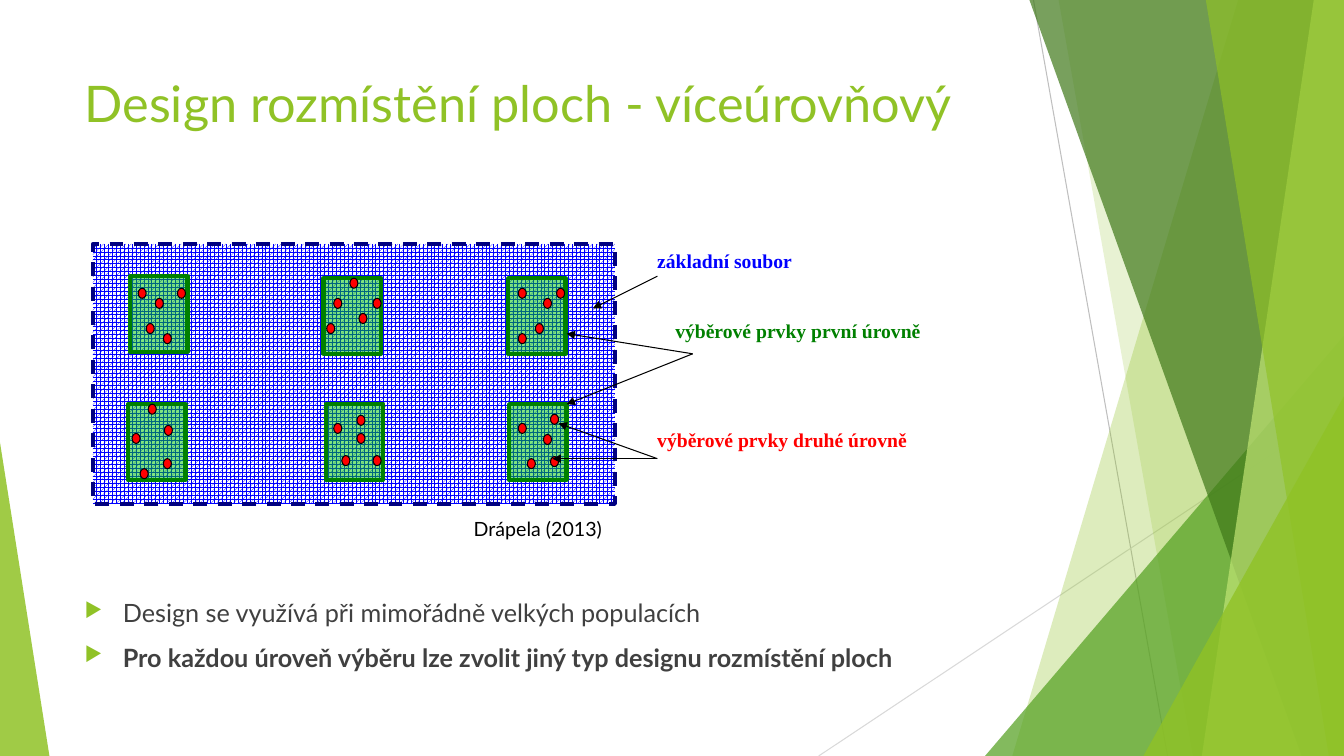
from lxml.etree import SubElement
from pptx import Presentation
from pptx.dml.color import RGBColor
from pptx.enum.dml import MSO_LINE, MSO_PATTERN
from pptx.enum.shapes import MSO_CONNECTOR, MSO_SHAPE
from pptx.enum.text import MSO_AUTO_SIZE, PP_ALIGN
from pptx.oxml.ns import qn
from pptx.util import Inches, Pt

W, H = 13.33, 7.5
COLORS = {
    "lime": "90C226", "pale": "C0E474", "green": "54A021", "forest": "3F7819",
    "light": "D9D9D9", "gray": "BFBFBF", "text": "404040", "black": "000000",
    "white": "FFFFFF", "blue": "0000FF", "navy": "000080", "red": "FF0000",
    "plot": "00CC00", "border": "008000",
}
TITLE = {"name": "Lato", "size": Pt(36)}
BODY = {"name": "Lato", "size": Pt(18)}
CREDIT = {"name": "Lato", "size": Pt(14)}
LABEL = {"name": "Times New Roman", "size": Pt(14), "bold": True}


class Deck:
    def __init__(self):
        self.prs = Presentation()
        self.prs.slide_width, self.prs.slide_height = Inches(W), Inches(H)
        self.s = self.prs.slides.add_slide(self.prs.slide_layouts[6])

    def color(self, name):
        return RGBColor.from_string(COLORS[name])

    def paint(self, sp, fill, alpha=100, line=None, width=0.75):
        sp.shadow.inherit = False
        sp.fill.solid()
        sp.fill.fore_color.rgb = self.color(fill)
        if alpha < 100:
            clr = sp.fill._xPr.find(".//" + qn("a:srgbClr"))
            SubElement(clr, qn("a:alpha"), val=str(alpha * 1000))
        if line:
            sp.line.color.rgb = self.color(line)
            sp.line.width = Pt(width)
        else:
            sp.line.fill.background()

    def shape(self, kind, box, fill, adj=None, **style):
        sp = self.s.shapes.add_shape(kind, *map(Inches, box))
        if adj is not None:
            sp.adjustments[0] = adj
        self.paint(sp, fill, **style)
        return sp

    def shard(self, top_x, bottom_x, fill, alpha):
        """Band from a slanted left edge to the right side of the slide."""
        points = [(W, 0), (W, H), (bottom_x, H)]
        fb = self.s.shapes.build_freeform(Inches(top_x), 0)
        fb.add_line_segments([(Inches(x), Inches(y)) for x, y in points])
        self.paint(fb.convert_to_shape(), fill, alpha)

    def line(self, start, end, color, arrow=False):
        cn = self.s.shapes.add_connector(
            MSO_CONNECTOR.STRAIGHT, *map(Inches, start + end))
        cn.line.color.rgb = self.color(color)
        cn.line.width = Pt(0.75)
        if arrow:
            SubElement(cn.line._get_or_add_ln(), qn("a:tailEnd"), type="triangle")
        SubElement(cn._element.spPr, qn("a:effectLst"))

    def text(self, box, lines, font, color, align=PP_ALIGN.LEFT, wrap=True):
        """Each line is a (text, extra font values) pair."""
        tf = self.s.shapes.add_textbox(*map(Inches, box)).text_frame
        tf.word_wrap = wrap
        if not wrap:
            tf.auto_size = MSO_AUTO_SIZE.SHAPE_TO_FIT_TEXT
        for i, (words, extra) in enumerate(lines):
            p = tf.add_paragraph() if i else tf.paragraphs[0]
            p.alignment = align
            p.space_before = Pt(10 if i else 0)
            r = p.add_run()
            r.text = words
            r.font.color.rgb = self.color(color)
            for key, value in {**font, **extra}.items():
                setattr(r.font, key, value)
        return tf

    def bullets(self, tf, color):
        for p in tf.paragraphs:
            pPr = p._p.get_or_add_pPr()
            pPr.set("marL", str(Inches(0.38)))
            pPr.set("indent", str(Inches(-0.38)))
            clr = SubElement(pPr, qn("a:buClr"))
            SubElement(clr, qn("a:srgbClr"), val=COLORS[color])
            SubElement(pPr, qn("a:buSzPct"), val="80000")
            SubElement(pPr, qn("a:buChar"), char="▶")


def main():
    d = Deck()

    # Background decoration
    d.line((10.25, 0), (11.58, H), "gray")
    d.line((W, 4.03), (8.12, H), "light")
    d.shard(12.28, 10.04, "lime", 30)
    d.shard(10.5, 11.83, "lime", 20)
    d.shape(MSO_SHAPE.ISOSCELES_TRIANGLE, (9.77, 3.33, 3.56, 4.17), "green", adj=1, alpha=72)
    d.shard(10.21, 12.91, "forest", 70)
    d.shard(13.03, 11.92, "pale", 70)
    d.shard(11.96, 13.18, "lime", 65)
    d.shape(MSO_SHAPE.ISOSCELES_TRIANGLE, (11.34, 3.93, 1.99, 3.57), "lime", adj=1, alpha=80)
    d.shape(MSO_SHAPE.ISOSCELES_TRIANGLE, (0, 4.39, 0.49, 3.11), "lime", adj=0, alpha=85)

    # Title and bullets
    d.text((0.74, 0.67, 9.4, 1.44),
           [("Design rozmístění ploch - víceúrovňový", {})], TITLE, "lime")
    tf = d.text((0.74, 5.88, 9.4, 1.37), [
        ("Design se využívá při mimořádně velkých populacích", {}),
        ("Pro každou úroveň výběru lze zvolit jiný typ designu rozmístění ploch",
         {"bold": True}),
    ], BODY, "text")
    d.bullets(tf, "lime")

    # Population
    area = d.shape(MSO_SHAPE.RECTANGLE, (0.92, 2.42, 5.18, 2.58), "white",
                   line="navy", width=2.5)
    area.line.dash_style = MSO_LINE.DASH
    area.fill.patterned()
    area.fill.pattern = MSO_PATTERN.SPHERE
    area.fill.fore_color.rgb = d.color("blue")
    area.fill.back_color.rgb = d.color("white")

    # First-level plots, each with its second-level sample points
    plots = {
        (1.29, 2.74): [(1.37, 2.86), (1.76, 2.86), (1.54, 2.96), (1.45, 3.21), (1.62, 3.31)],
        (3.21, 2.76): [(3.31, 2.96), (3.7, 2.96), (3.47, 2.76), (3.24, 3.21), (3.56, 3.11)],
        (5.04, 2.76): [(5.14, 2.86), (5.52, 2.86), (5.31, 3.21), (5.14, 3.31), (5.39, 2.96)],
        (1.27, 4.01): [(1.31, 4.3), (1.47, 4.01), (1.39, 4.65), (1.62, 4.55), (1.63, 4.22)],
        (3.23, 4.01): [(3.54, 4.12), (3.7, 4.52), (3.31, 4.2), (3.39, 4.52), (3.54, 4.3)],
        (5.05, 4.01): [(5.14, 4.2), (5.46, 4.11), (5.23, 4.55), (5.39, 4.31), (5.46, 4.53)],
    }
    for corner, points in plots.items():
        d.shape(MSO_SHAPE.RECTANGLE, corner + (0.57, 0.75), "plot",
                alpha=50, line="border", width=3)
        for point in points:
            d.shape(MSO_SHAPE.OVAL, point + (0.08, 0.1), "red", line="black")

    # Labels and their arrows
    labels = [
        ("základní soubor", (6.42, 2.42, 2.71, 0.65), "blue", PP_ALIGN.JUSTIFY,
         (6.52, 2.74), [(5.88, 3.06)]),
        ("výběrové prvky první úrovně", (6.32, 3.11, 3.19, 0.99), "border", PP_ALIGN.CENTER,
         (6.87, 3.51), [(5.62, 3.31), (5.62, 4.01)]),
        ("výběrové prvky druhé úrovně", (6.42, 4.2, 3.25, 1.04), "red", PP_ALIGN.JUSTIFY,
         (6.52, 4.55), [(5.54, 4.2), (5.48, 4.55)]),
    ]
    for words, box, color, align, start, targets in labels:
        d.text(box, [(words, {})], LABEL, color, align)
        for target in targets:
            d.line(start, target, "black", arrow=True)

    # Credit
    d.text((4.6, 5.08, 1.5, 0.34), [("Drápela (2013)", {})], CREDIT, "black", wrap=False)

    d.prs.save("out.pptx")


if __name__ == "__main__":
    main()
